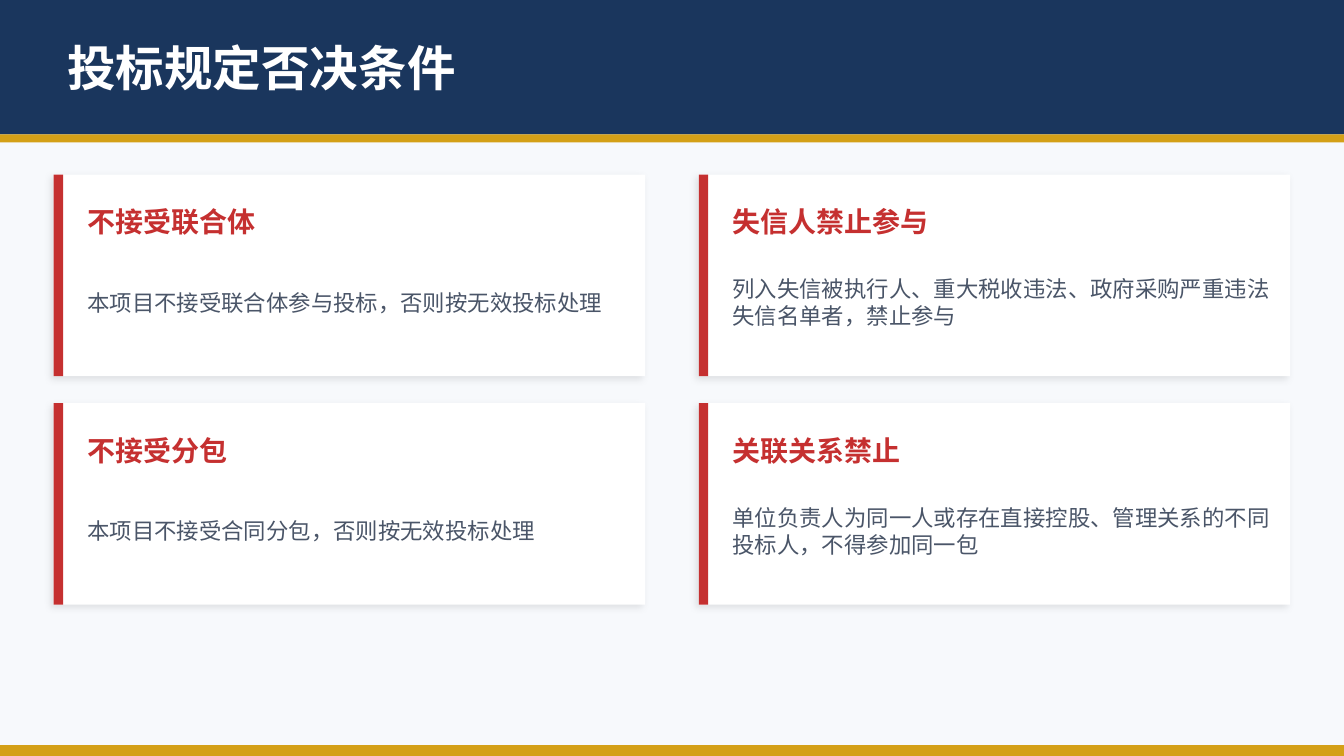
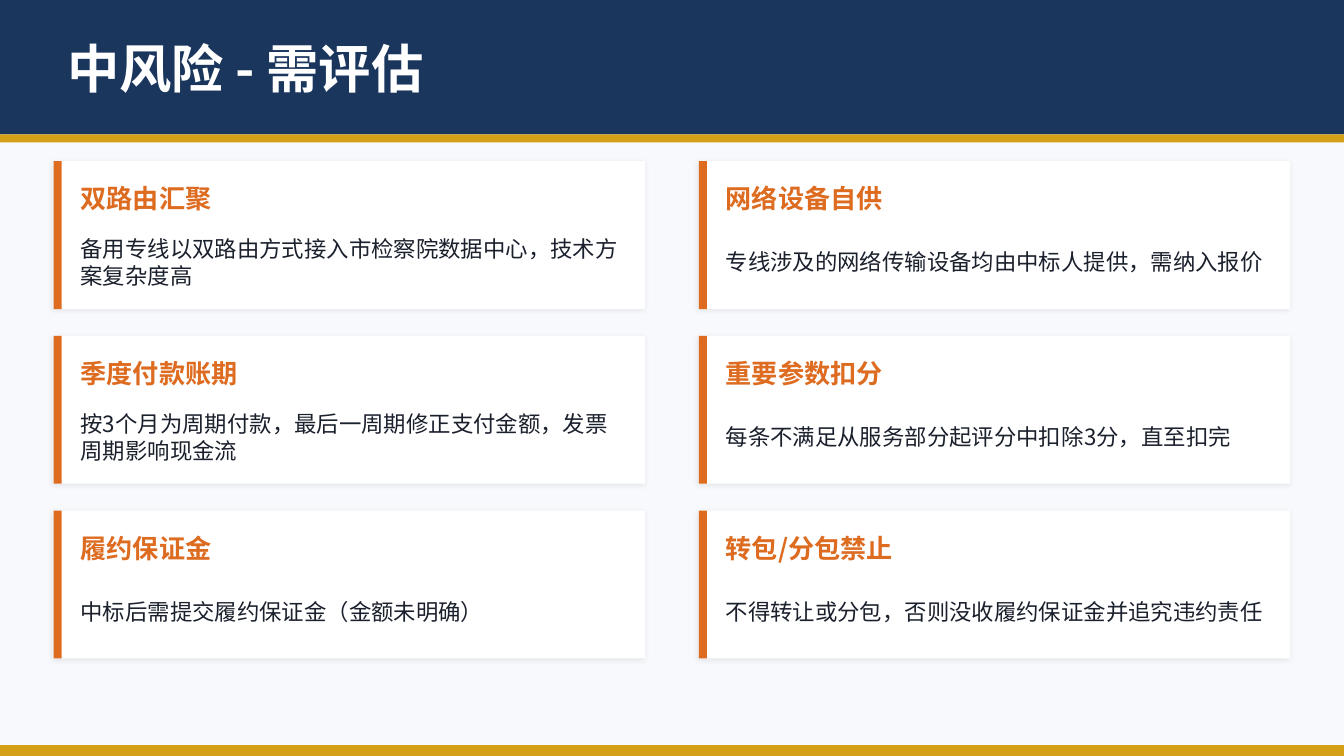
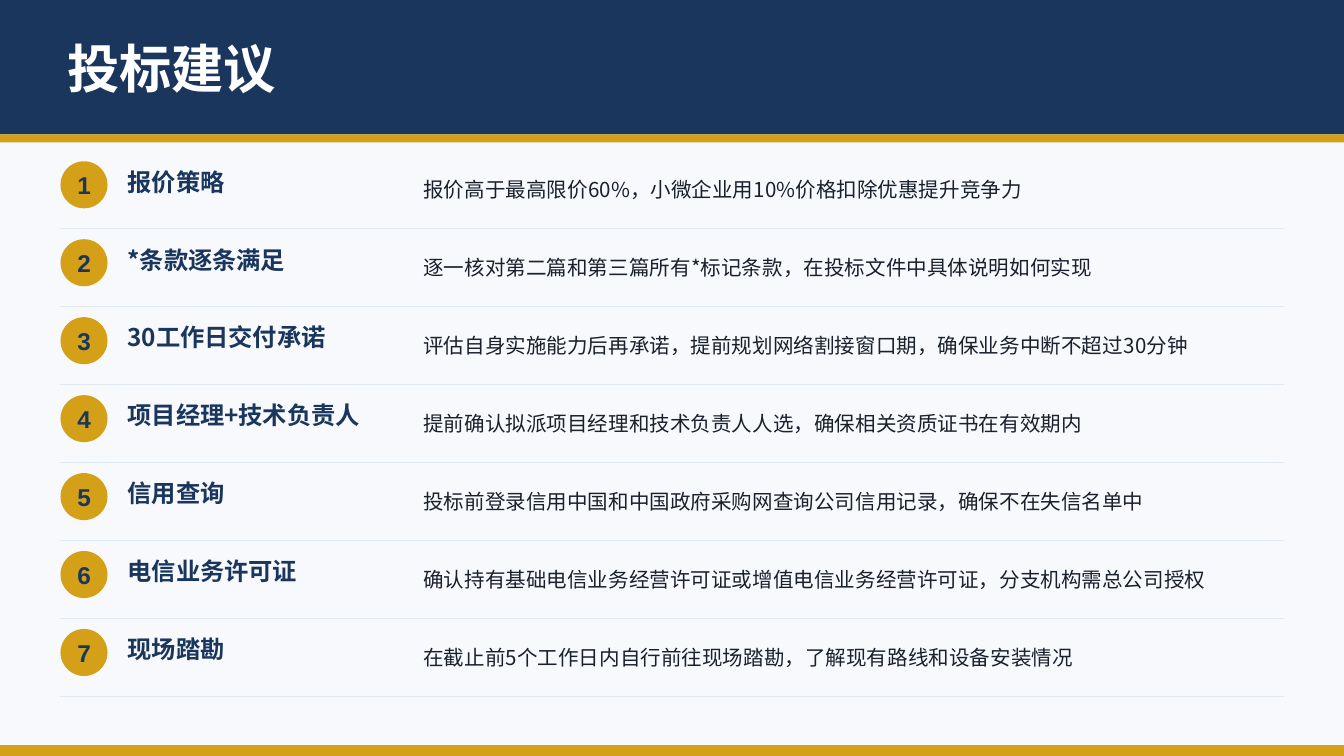
"""Build three slides on bid rejection terms, medium risks and bidding advice."""
from dataclasses import dataclass

from lxml import etree
from pptx import Presentation
from pptx.dml.color import RGBColor
from pptx.enum.shapes import MSO_CONNECTOR, MSO_SHAPE
from pptx.enum.text import MSO_ANCHOR, MSO_AUTO_SIZE, PP_ALIGN
from pptx.oxml.ns import qn
from pptx.util import Pt

RECTANGLE, OVAL = MSO_SHAPE.RECTANGLE, MSO_SHAPE.OVAL
STRAIGHT = MSO_CONNECTOR.STRAIGHT
MIDDLE, NO_FIT = MSO_ANCHOR.MIDDLE, MSO_AUTO_SIZE.NONE
LEFT, CENTER = PP_ALIGN.LEFT, PP_ALIGN.CENTER
TITLE_ONLY = 5
PAGE_WIDTH, PAGE_HEIGHT = 720, 405


@dataclass(frozen=True)
class Theme:
    """Fonts, colours and type sizes of the deck."""
    font: str = "Noto Sans CJK SC"
    number_font: str = "Arial"
    background: str = "F7F9FC"
    navy: str = "1A365D"
    gold: str = "D4A017"
    white: str = "FFFFFF"
    black: str = "000000"
    red: str = "C53030"
    orange: str = "DD6B20"
    slate: str = "4A5568"
    ink: str = "1A202C"
    rule: str = "E2E8F0"
    title_size: int = 28
    long_title_size: int = 26
    large_heading_size: int = 15
    heading_size: int = 14
    advice_size: int = 13
    body_size: int = 12
    detail_size: int = 11


THEME = Theme()


@dataclass(frozen=True)
class CardStyle:
    """Measures and colours of one grid of cards."""
    accent: str
    body_color: str
    heading_size: int
    top: float
    height: float
    bar_width: float
    indent: float
    padding: float
    heading_height: float
    body_height: float
    shadow_blur: float
    shadow_distance: float
    shadow_percent: int


REJECTION_STYLE = CardStyle(
    accent=THEME.red, body_color=THEME.slate, heading_size=THEME.large_heading_size,
    top=93.6, height=108, bar_width=5.04, indent=18, padding=10.8,
    heading_height=28.8, body_height=57.6,
    shadow_blur=4, shadow_distance=2, shadow_percent=10)
RISK_STYLE = CardStyle(
    accent=THEME.orange, body_color=THEME.ink, heading_size=THEME.heading_size,
    top=86.4, height=79.2, bar_width=4.32, indent=14.4, padding=7.2,
    heading_height=25.2, body_height=43.2,
    shadow_blur=3, shadow_distance=1, shadow_percent=8)

REJECTIONS = [
    ("不接受联合体", "本项目不接受联合体参与投标，否则按无效投标处理"),
    ("失信人禁止参与", "列入失信被执行人、重大税收违法、政府采购严重违法失信名单者，禁止参与"),
    ("不接受分包", "本项目不接受合同分包，否则按无效投标处理"),
    ("关联关系禁止", "单位负责人为同一人或存在直接控股、管理关系的不同投标人，不得参加同一包"),
]
RISKS = [
    ("双路由汇聚", "备用专线以双路由方式接入市检察院数据中心，技术方案复杂度高"),
    ("网络设备自供", "专线涉及的网络传输设备均由中标人提供，需纳入报价"),
    ("季度付款账期", "按3个月为周期付款，最后一周期修正支付金额，发票周期影响现金流"),
    ("重要参数扣分", "每条不满足从服务部分起评分中扣除3分，直至扣完"),
    ("履约保证金", "中标后需提交履约保证金（金额未明确）"),
    ("转包/分包禁止", "不得转让或分包，否则没收履约保证金并追究违约责任"),
]
ADVICE = [
    ("报价策略", "报价高于最高限价60%，小微企业用10%价格扣除优惠提升竞争力"),
    ("*条款逐条满足", "逐一核对第二篇和第三篇所有*标记条款，在投标文件中具体说明如何实现"),
    ("30工作日交付承诺", "评估自身实施能力后再承诺，提前规划网络割接窗口期，确保业务中断不超过30分钟"),
    ("项目经理+技术负责人", "提前确认拟派项目经理和技术负责人人选，确保相关资质证书在有效期内"),
    ("信用查询", "投标前登录信用中国和中国政府采购网查询公司信用记录，确保不在失信名单中"),
    ("电信业务许可证", "确认持有基础电信业务经营许可证或增值电信业务经营许可证，分支机构需总公司授权"),
    ("现场踏勘", "在截止前5个工作日内自行前往现场踏勘，了解现有路线和设备安装情况"),
]


def points(*lengths):
    """Turn numbers into point lengths."""
    return [Pt(length) for length in lengths]


def write(box, text, *, size, color, bold=False, font=THEME.font, align=LEFT):
    """Put one formatted paragraph, vertically centred, into a box."""
    frame = box.text_frame
    frame.word_wrap = True
    frame.auto_size = NO_FIT
    frame.vertical_anchor = MIDDLE
    frame.margin_left = frame.margin_right = frame.margin_top = frame.margin_bottom = 0
    para = frame.paragraphs[0]
    para.alignment = align
    span = para.add_run()
    span.text = text
    span.font.name = font
    span.font.size = Pt(size)
    span.font.bold = bold
    span.font.color.rgb = RGBColor.from_string(color)
    east_asian = etree.SubElement(span._r.get_or_add_rPr(), qn("a:ea"))
    east_asian.set("typeface", font)


def add_text(page, text, left, top, width, height, **text_format):
    """Add a text box with one formatted paragraph."""
    write(page.shapes.add_textbox(*points(left, top, width, height)), text, **text_format)


def add_block(page, left, top, width, height, color, kind=RECTANGLE):
    """Add a filled shape without outline or shadow."""
    block = page.shapes.add_shape(kind, *points(left, top, width, height))
    block.shadow.inherit = False
    block.fill.solid()
    block.fill.fore_color.rgb = RGBColor.from_string(color)
    block.line.fill.background()
    return block


def add_shadow(block, blur, distance, percent):
    """Give a block a soft shadow towards the lower left."""
    effects = block.element.spPr.find(qn("a:effectLst"))
    shadow = etree.SubElement(
        effects, qn("a:outerShdw"), blurRad=str(Pt(blur)), dist=str(Pt(distance)),
        dir=str(135 * 60000), algn="bl", rotWithShape="0")
    tint = etree.SubElement(shadow, qn("a:srgbClr"), val=THEME.black)
    etree.SubElement(tint, qn("a:alpha"), val=str(percent * 1000))


def add_rule(page, left, right, height):
    """Add a thin horizontal rule."""
    rule = page.shapes.add_connector(STRAIGHT, *points(left, height, right, height))
    rule.line.color.rgb = RGBColor.from_string(THEME.rule)
    rule.line.width = Pt(0.5)
    etree.SubElement(rule.element.spPr, qn("a:effectLst"))


def add_page(deck, title, size=THEME.title_size):
    """Add a page with header band, gold strips and title."""
    page = deck.slides.add_slide(deck.slide_layouts[TITLE_ONLY])
    add_block(page, 0, 0, PAGE_WIDTH, 72, THEME.navy)
    add_block(page, 0, 72, PAGE_WIDTH, 4.32, THEME.gold)
    add_block(page, 0, PAGE_HEIGHT - 5.76, PAGE_WIDTH, 5.76, THEME.gold)
    box = page.shapes.title
    box.left, box.top, box.width, box.height = points(36, 14.4, 648, 43.2)
    write(box, title, size=size, color=THEME.white, bold=True)
    box.element.getparent().append(box.element)
    return page


def add_card(page, left, top, heading, body, style):
    """Add a white card with accent bar, heading and body."""
    card = add_block(page, left, top, 316.8, style.height, THEME.white)
    add_shadow(card, style.shadow_blur, style.shadow_distance, style.shadow_percent)
    add_block(page, left, top, style.bar_width, style.height, style.accent)
    text_left, heading_top = left + style.indent, top + style.padding
    add_text(page, heading, text_left, heading_top, 288, style.heading_height,
             size=style.heading_size, color=style.accent, bold=True)
    add_text(page, body, text_left, heading_top + style.heading_height, 288,
             style.body_height, size=THEME.body_size, color=style.body_color)


def add_card_grid(page, cards, style):
    """Lay cards out in two columns, row by row."""
    for index, (heading, body) in enumerate(cards):
        row, column = divmod(index, 2)
        add_card(page, 28.8 + column * 345.6, style.top + row * (style.height + 14.4),
                 heading, body, style)


def add_advice_row(page, number, top, heading, detail):
    """Add a numbered disc, heading, detail and closing rule."""
    disc = add_block(page, 32.4, top + 3.6, 25.2, 25.2, THEME.gold, OVAL)
    write(disc, str(number), size=THEME.advice_size, color=THEME.navy, bold=True,
          font=THEME.number_font, align=CENTER)
    add_text(page, heading, 68.4, top, 158.4, 28.8,
             size=THEME.advice_size, color=THEME.navy, bold=True)
    add_text(page, detail, 226.8, top, 460.8, 37.44,
             size=THEME.detail_size, color=THEME.ink)
    add_rule(page, 32.4, 687.6, top + 39.6)


def main():
    """Build and save the deck."""
    deck = Presentation()
    deck.slide_width, deck.slide_height = points(PAGE_WIDTH, PAGE_HEIGHT)
    backdrop = deck.slide_master.background.fill
    backdrop.solid()
    backdrop.fore_color.rgb = RGBColor.from_string(THEME.background)

    rejection_page = add_page(deck, "投标规定否决条件", THEME.long_title_size)
    add_card_grid(rejection_page, REJECTIONS, REJECTION_STYLE)

    risk_page = add_page(deck, "中风险 - 需评估")
    add_card_grid(risk_page, RISKS, RISK_STYLE)

    advice_page = add_page(deck, "投标建议")
    for index, (heading, detail) in enumerate(ADVICE):
        add_advice_row(advice_page, index + 1, 82.8 + index * 41.76, heading, detail)

    deck.save("out.pptx")


if __name__ == "__main__":
    main()
